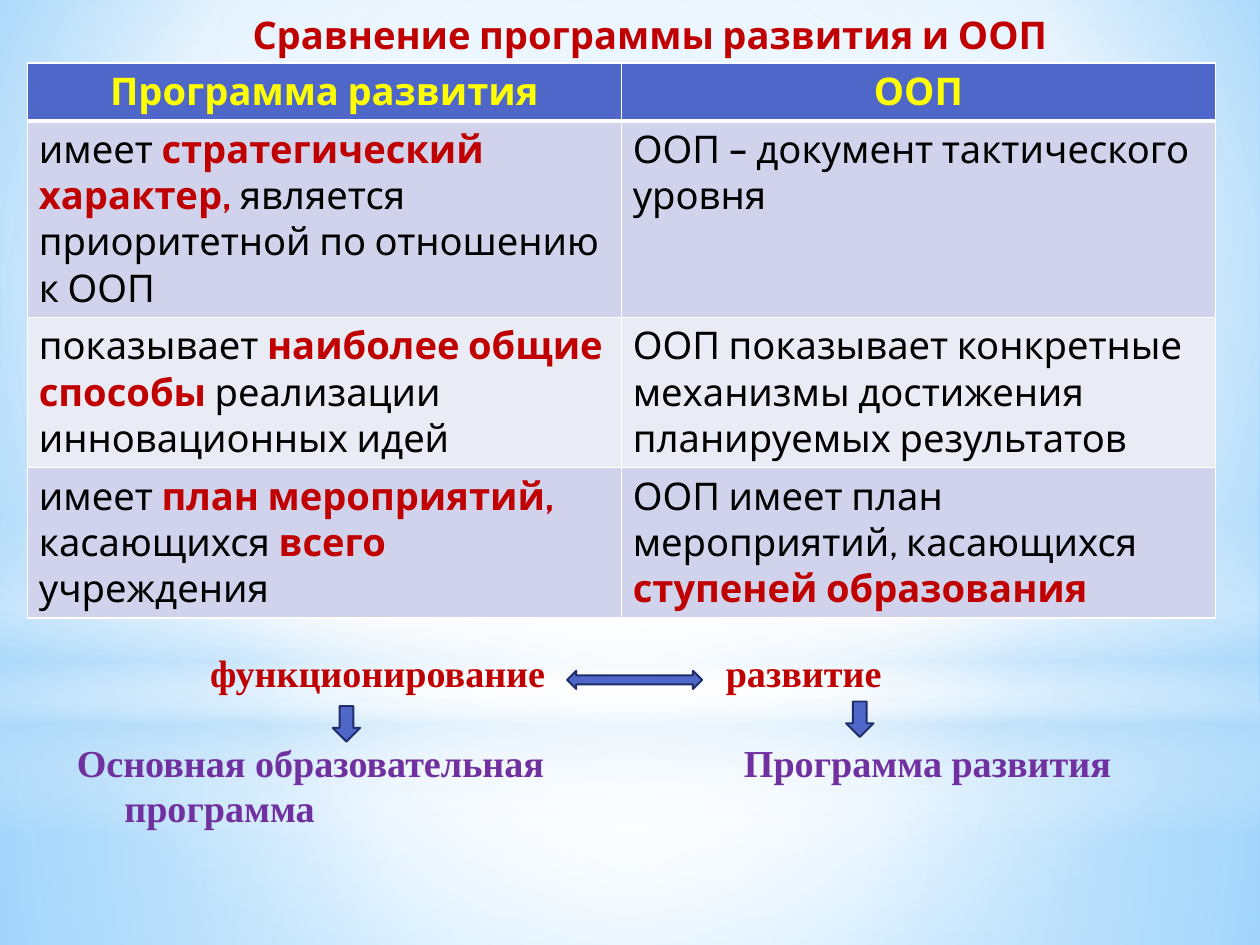
from lxml import etree
from pptx import Presentation
from pptx.dml.color import RGBColor
from pptx.enum.shapes import MSO_SHAPE
from pptx.enum.text import MSO_ANCHOR, PP_ALIGN
from pptx.oxml.ns import qn
from pptx.util import Cm, Pt

RECTANGLE, ELLIPSE = MSO_SHAPE.RECTANGLE, MSO_SHAPE.OVAL
TWO_WAY, DOWN = MSO_SHAPE.LEFT_RIGHT_ARROW, MSO_SHAPE.DOWN_ARROW
CENTER, LEFT, TOP = PP_ALIGN.CENTER, PP_ALIGN.LEFT, MSO_ANCHOR.TOP

WIDTH, HEIGHT = Cm(28), Cm(21)
SANS, SERIF = "Cabin", "Times New Roman"
RED, YELLOW, PURPLE, BLACK = "C00000", "FFFF00", "7030A0", "000000"
BLUE, NAVY, WHITE, SKY = "4E67C8", "1F2E69", "FFFFFF", "B4DCFA"
BANDS = ["D0D3EB", "E9EBF5"]
MIDDLE = (50, 50, 50, 50)

# Each cell is a list of (text, emphasised) runs
HEADINGS = ["Программа развития", "ООП"]
COMPARISON = [
    ([("имеет ", False), ("стратегический характер, ", True),
      ("является приоритетной по отношению к ООП", False)],
     [("ООП – документ тактического уровня", False)]),
    ([("показывает ", False), ("наиболее общие способы ", True),
      ("реализации инновационных идей", False)],
     [("ООП показывает конкретные механизмы достижения планируемых результатов", False)]),
    ([("имеет ", False), ("план мероприятий, ", True), ("касающихся ", False),
      ("всего ", True), ("учреждения", False)],
     [("ООП имеет план мероприятий, касающихся ", False),
      ("ступеней образования", True)]),
]
ROW_HEIGHTS = [6, 20.75, 15.84, 15.84]

# Text, colour, space before in points, tab stops in percent of the width
SCHEME = [
    ("\tфункционирование\tразвитие", RED, 0, (14.34, 55.26)),
    ("\tОсновная образовательная\tПрограмма развития", PURPLE, 28, (3.75, 56.7)),
    ("\tпрограмма", PURPLE, 0, (7.53,)),
]
ARROWS = [
    (TWO_WAY, (45.01, 70.98, 10.71, 1.93)),
    (DOWN, (26.41, 74.73, 2.18, 3.75)),
    (DOWN, (67.15, 74.24, 2.18, 3.75)),
]

# Shape, place, gradient stops (position, colour, opacity), focus
BACKDROP = [
    (RECTANGLE, (0, 74.37, 100, 25.63),
     [(0, WHITE, 91), (37, WHITE, 76), (100, SKY, 79)], MIDDLE),
    (RECTANGLE, (0, 0, 100, 74.37),
     [(0, WHITE, 89), (48, WHITE, 62), (100, SKY, 79)], MIDDLE),
    (RECTANGLE, (0, 54.9, 100, 33.37),
     [(0, WHITE, 0), (29, WHITE, 30), (45, SKY, 40), (55, WHITE, 26),
      (65, SKY, 60), (100, WHITE, 0)], None),
    (ELLIPSE, (0, 23.34, 100, 74.37), [(0, WHITE, 100), (56, WHITE, 0)], MIDDLE),
]


def color(code):
    return RGBColor.from_string(code)


def across(percent):
    return round(WIDTH * percent / 100)


def down(percent):
    return round(HEIGHT * percent / 100)


def place(left, top, width, height):
    return across(left), down(top), across(width), down(height)


def child(parent, tag, **attributes):
    values = {name: str(value) for name, value in attributes.items()}
    return etree.SubElement(parent, qn(tag), values)


def set_gradient(holder, stops, focus):
    """Replace the solid fill of an element; without a focus it runs downwards."""
    solid = holder.find(qn("a:solidFill"))
    gradient = etree.Element(qn("a:gradFill"), {"rotWithShape": "1"})
    stop_list = child(gradient, "a:gsLst")
    for position, code, opacity in stops:
        stop = child(stop_list, "a:gs", pos=position * 1000)
        child(child(stop, "a:srgbClr", val=code), "a:alpha", val=opacity * 1000)
    if focus:
        circle = child(gradient, "a:path", path="circle")
        sides = {side: share * 1000 for side, share in zip("ltrb", focus)}
        child(circle, "a:fillToRect", **sides)
    else:
        child(gradient, "a:lin", ang=90 * 60000, scaled=0)
    holder.replace(solid, gradient)


def add_figure(page, kind, area, fill):
    figure = page.shapes.add_shape(kind, *place(*area))
    figure.shadow.inherit = False
    figure.fill.solid()
    figure.fill.fore_color.rgb = color(fill)
    return figure


def add_run(para, text, font, code, bold=True):
    run = para.add_run()
    run.text = text
    run.font.name, run.font.size, run.font.bold = font, Pt(24), bold
    run.font.color.rgb = color(code)


def add_backdrop(page):
    page.background.fill.solid()
    set_gradient(next(page.element.iter(qn("p:bgPr"))),
                 [(0, "9ED5FF", 100), (60, WHITE, 100), (100, "5BB9FF", 100)],
                 (20, 10, 20, 60))
    for kind, area, stops, focus in BACKDROP:
        layer = add_figure(page, kind, area, WHITE)
        layer.line.fill.background()
        set_gradient(layer.element.spPr, stops, focus)
        page.shapes.title.element.addprevious(layer.element)


def add_title(page, text):
    title = page.shapes.title
    title.left, title.top, title.width, title.height = place(9.8, 0.6, 83.57, 6.05)
    title.text_frame.vertical_anchor = TOP
    para = title.text_frame.paragraphs[0]
    para.alignment = CENTER
    add_run(para, text, SANS, RED)


def style_cell(cell, fill, top=1, bottom=1):
    cell.fill.solid()
    cell.fill.fore_color.rgb = color(fill)
    properties = cell._tc.get_or_add_tcPr()
    widths = [("L", 1), ("R", 1), ("T", top), ("B", bottom)]
    for index, (side, points) in enumerate(widths):
        border = etree.Element(qn("a:ln" + side), {"w": str(Pt(points))})
        child(child(border, "a:solidFill"), "a:srgbClr", val=WHITE)
        properties.insert(index, border)


def add_comparison(page):
    area = place(2.18, 6.65, 94.28, sum(ROW_HEIGHTS))
    table = page.shapes.add_table(len(ROW_HEIGHTS), len(HEADINGS), *area).table
    for row, height in zip(table.rows, ROW_HEIGHTS):
        row.height = down(height)
    for column, heading in enumerate(HEADINGS):
        cell = table.cell(0, column)
        style_cell(cell, BLUE, bottom=3)
        para = cell.text_frame.paragraphs[0]
        para.alignment = CENTER
        add_run(para, heading, SANS, YELLOW)
    for row, entries in enumerate(COMPARISON, start=1):
        for column, runs in enumerate(entries):
            cell = table.cell(row, column)
            style_cell(cell, BANDS[(row - 1) % 2], top=3 if row == 1 else 1)
            para = cell.text_frame.paragraphs[0]
            for text, strong in runs:
                add_run(para, text, SANS, RED if strong else BLACK, strong)


def add_scheme(page):
    box = page.shapes.add_textbox(*place(1.45, 68.08, 89.29, 24.43))
    frame = box.text_frame
    frame.word_wrap = True
    for index, (text, code, gap, stops) in enumerate(SCHEME):
        para = frame.add_paragraph() if index else frame.paragraphs[0]
        para.alignment = LEFT
        para.space_before = Pt(gap)
        tabs = child(para._p.get_or_add_pPr(), "a:tabLst")
        for stop in stops:
            child(tabs, "a:tab", pos=across(stop), algn="l")
        add_run(para, text, SERIF, code)
    for kind, area in ARROWS:
        arrow = add_figure(page, kind, area, BLUE)
        arrow.line.color.rgb = color(NAVY)
        arrow.line.width = Pt(1.25)


def main():
    deck = Presentation()
    deck.slide_width, deck.slide_height = WIDTH, HEIGHT
    page = deck.slides.add_slide(deck.slide_layouts[5])
    add_backdrop(page)
    add_title(page, "Сравнение программы развития и ООП")
    add_comparison(page)
    add_scheme(page)
    deck.save("out.pptx")


if __name__ == "__main__":
    main()
